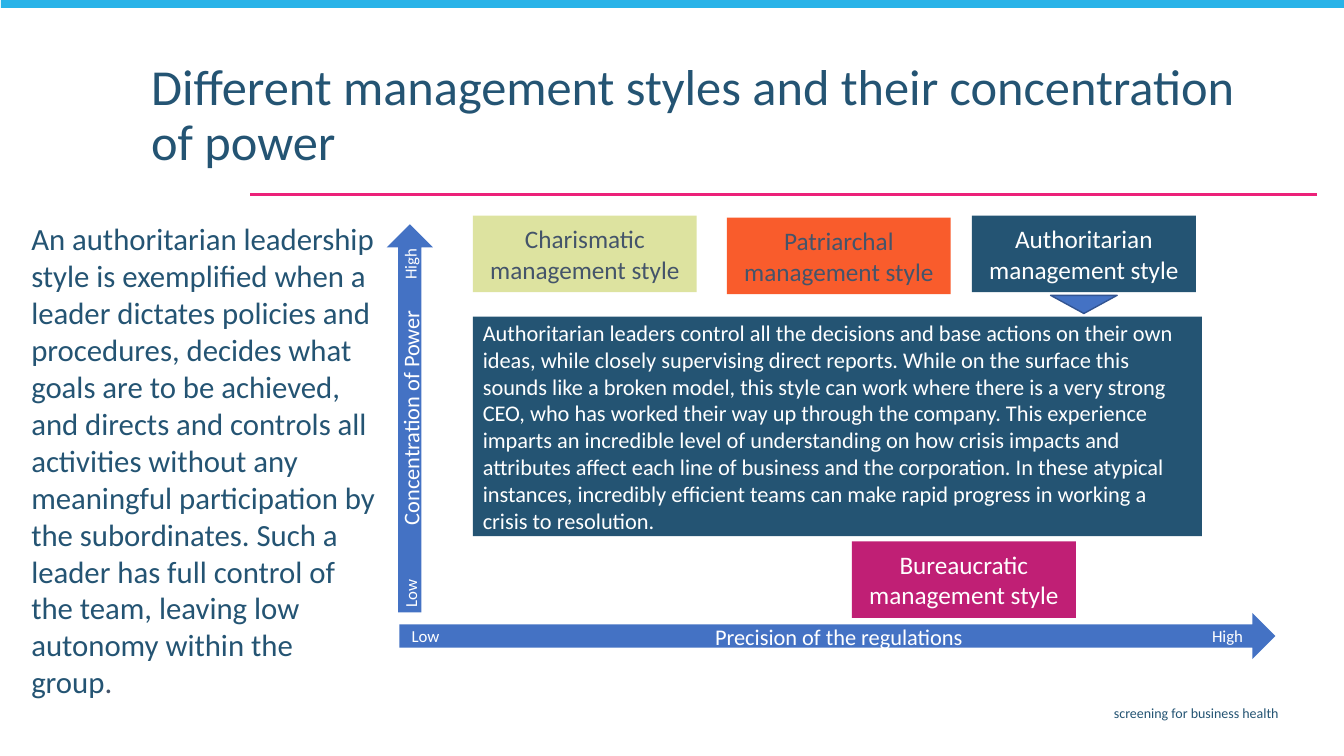
from lxml import etree
from pptx import Presentation
from pptx.dml.color import RGBColor
from pptx.enum.shapes import MSO_CONNECTOR, MSO_SHAPE
from pptx.enum.text import MSO_ANCHOR, MSO_AUTO_SIZE, PP_ALIGN
from pptx.oxml.ns import qn
from pptx.util import Inches, Pt

RECTANGLE = MSO_SHAPE.RECTANGLE
RIGHT_ARROW = MSO_SHAPE.RIGHT_ARROW
TRIANGLE = MSO_SHAPE.ISOSCELES_TRIANGLE
STRAIGHT = MSO_CONNECTOR.STRAIGHT
TOP, MIDDLE = MSO_ANCHOR.TOP, MSO_ANCHOR.MIDDLE
LEFT, CENTER, RIGHT = PP_ALIGN.LEFT, PP_ALIGN.CENTER, PP_ALIGN.RIGHT
GROW, FIXED = MSO_AUTO_SIZE.SHAPE_TO_FIT_TEXT, MSO_AUTO_SIZE.NONE

FONT = "Calibri"
WHITE = RGBColor(0xFF, 0xFF, 0xFF)
NAVY = RGBColor(0x24, 0x54, 0x73)
SLATE = RGBColor(0x44, 0x54, 0x6A)
BLUE = RGBColor(0x44, 0x72, 0xC4)
DARK_BLUE = RGBColor(0x32, 0x54, 0x91)
SKY = RGBColor(0x29, 0xB3, 0xE8)
PINK = RGBColor(0xEC, 0x21, 0x79)
MAGENTA = RGBColor(0xC0, 0x1F, 0x75)
LIME = RGBColor(0xDD, 0xE3, 0xA0)
ORANGE = RGBColor(0xF9, 0x5C, 0x2C)

TITLE = "Different management styles and their concentration of power"
SUMMARY = (
    "An authoritarian leadership style is exemplified when a leader dictates "
    "policies and procedures, decides what goals are to be achieved, and directs "
    "and controls all activities without any meaningful participation by the "
    "subordinates. Such a leader has full control of the team, leaving low "
    "autonomy within the group"
)
DETAIL = (
    "Authoritarian leaders control all the decisions and base actions on their own "
    "ideas, while closely supervising direct reports. While on the surface this "
    "sounds like a broken model, this style can work where there is a very strong "
    "CEO, who has worked their way up through the company. This experience imparts "
    "an incredible level of understanding on how crisis impacts and attributes "
    "affect each line of business and the corporation. In these atypical instances, "
    "incredibly efficient teams can make rapid progress in working a crisis to "
    "resolution."
)
STYLES = [
    ("Charismatic", 4.69, 2.14, LIME, SLATE),
    ("Patriarchal", 7.21, 2.16, ORANGE, SLATE),
    ("Authoritarian", 9.64, 2.14, NAVY, WHITE),
    ("Bureaucratic", 8.45, 5.37, MAGENTA, WHITE),
]
AXES = [
    ((3.96, 6.08, 8.69, 0.46), 0, [
        ("Precision of the regulations", 16, (6.99, 6.13, 2.66, 0.37)),
        ("Low", 12, (3.98, 6.16, 0.48, 0.3)),
        ("High", 12, (11.92, 6.16, 0.51, 0.3)),
    ]),
    ((2.14, 3.92, 3.85, 0.46), 270, [
        ("Concentration of Power", 16, (2.9, 3.96, 2.34, 0.37)),
        ("Low", 12, (3.83, 5.74, 0.48, 0.3)),
        ("High", 12, (3.81, 2.47, 0.51, 0.3)),
    ]),
]


def add_span(para, text, size, color):
    span = para.add_run()
    span.text = text
    span.font.name = FONT
    span.font.size = Pt(size)
    span.font.color.rgb = color


def write_text(box, text, size, color, align=LEFT, anchor=TOP, wrap=True,
               fit=FIXED, line_spacing=None):
    frame = box.text_frame
    frame.auto_size = fit
    frame.word_wrap = wrap
    frame.vertical_anchor = anchor
    para = frame.paragraphs[0]
    para.alignment = align
    if line_spacing:
        para.line_spacing = line_spacing
    add_span(para, text, size, color)
    return para


def add_box(page, place, rotation=0):
    box = page.shapes.add_textbox(*map(Inches, place))
    box.rotation = rotation
    return box


def add_block(page, kind, place, fill, rotation=0, outline=None):
    block = page.shapes.add_shape(kind, *map(Inches, place))
    block.shadow.inherit = False
    block.rotation = rotation
    block.fill.solid()
    block.fill.fore_color.rgb = fill
    if outline:
        block.line.color.rgb = outline
        block.line.width = Pt(1)
    else:
        block.line.fill.background()
    return block


def add_rule(page, start, end, color, width):
    rule = page.shapes.add_connector(STRAIGHT, *map(Inches, start + end))
    rule.line.color.rgb = color
    rule.line.width = Pt(width)
    properties = rule._element.find(qn("p:spPr"))
    etree.SubElement(properties, qn("a:effectLst"))


def add_axis(page, place, rotation, labels):
    add_block(page, RIGHT_ARROW, place, BLUE, rotation=rotation)
    for text, size, label_place in labels:
        label = add_box(page, label_place, rotation)
        write_text(label, text, size, WHITE, align=CENTER, anchor=MIDDLE,
                   wrap=False, fit=GROW)


def add_summary(page):
    box = add_box(page, (0.22, 2.14, 3.62, 4.53))
    frame = box.text_frame
    frame.margin_left = frame.margin_right = Inches(0.09)
    frame.margin_top = frame.margin_bottom = Inches(0.04)
    para = write_text(box, SUMMARY, 22, NAVY, fit=GROW)
    add_span(para, ".", 22, SLATE)


def main():
    deck = Presentation()
    deck.slide_width, deck.slide_height = Inches(13.33), Inches(7.5)
    page = deck.slides.add_slide(deck.slide_layouts[6])

    add_rule(page, (13.06, 1.93), (2.48, 1.93), PINK, 1.5)
    add_block(page, RECTANGLE, (0.01, -0.02, 13.34, 0.1), SKY)
    footer = add_box(page, (3.65, 6.94, 9.13, 0.29))
    write_text(footer, "screening for business health", 10, NAVY, align=RIGHT)
    title = add_box(page, (1.4, 0.57, 11.25, 1.05))
    write_text(title, TITLE, 36, NAVY, line_spacing=0.9)
    add_summary(page)

    for place, rotation, labels in AXES:
        add_axis(page, place, rotation, labels)

    for name, left, top, fill, color in STYLES:
        card = add_block(page, RECTANGLE, (left, top, 2.22, 0.76), fill)
        write_text(card, f"{name} management style", 18, color,
                   align=CENTER, anchor=MIDDLE)

    detail = add_block(page, RECTANGLE, (4.69, 3.14, 7.23, 2.18), NAVY)
    write_text(detail, DETAIL, 16, WHITE, anchor=MIDDLE)
    add_block(page, TRIANGLE, (10.42, 2.93, 0.66, 0.18), BLUE,
              rotation=180, outline=DARK_BLUE)

    deck.save("out.pptx")


if __name__ == "__main__":
    main()
